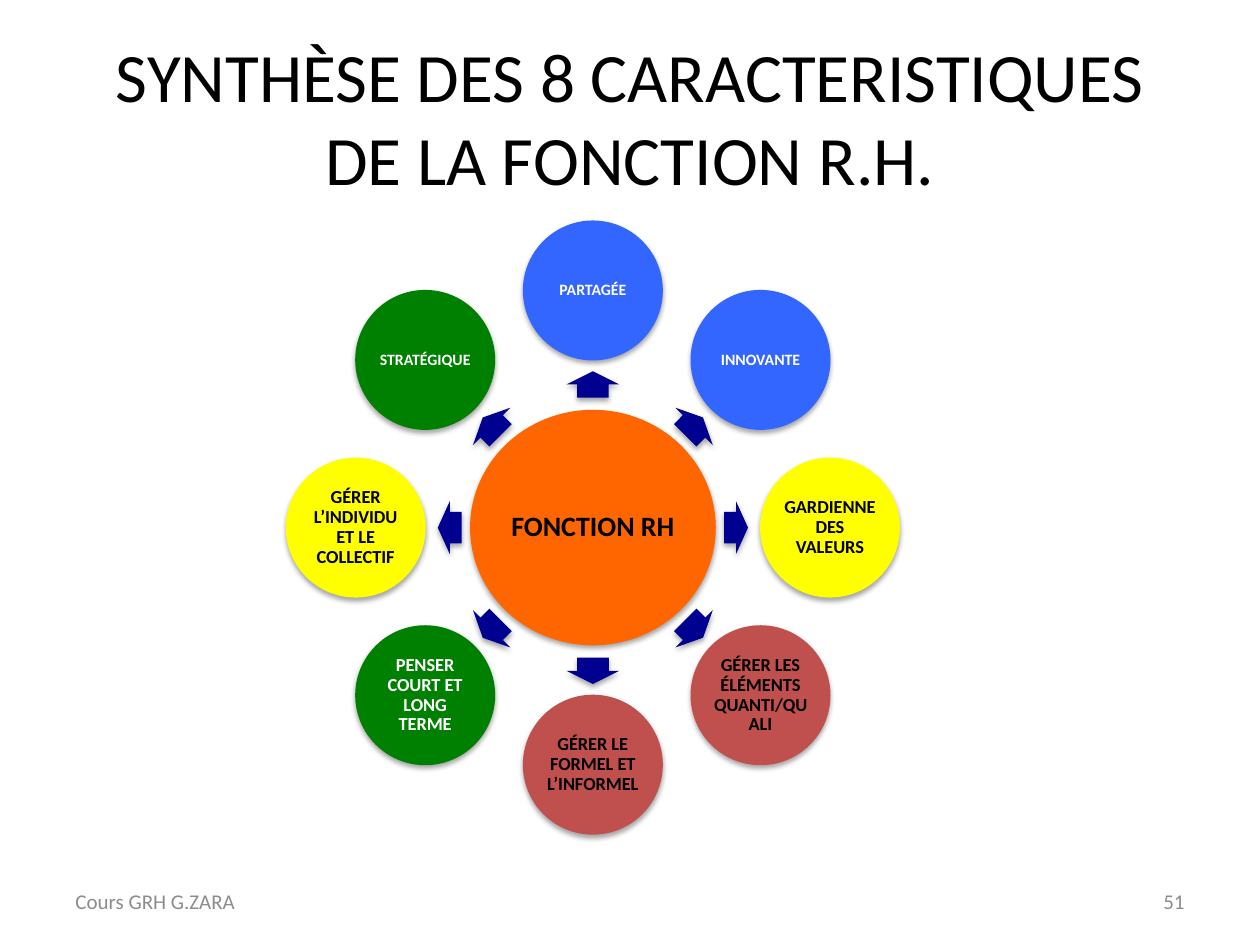
from math import cos, radians, sin

from lxml import etree
from pptx import Presentation
from pptx.dml.color import RGBColor
from pptx.enum.shapes import MSO_SHAPE as SHAPE
from pptx.enum.text import MSO_ANCHOR as ANCHOR, MSO_AUTO_SIZE as AUTO, PP_ALIGN as ALIGN
from pptx.oxml.ns import qn
from pptx.util import Pt


def write(sp, text, size, color, align, bold=False, inset=None):
    tf = sp.text_frame
    tf.word_wrap = True
    tf.auto_size = AUTO.NONE
    tf.vertical_anchor = ANCHOR.MIDDLE
    if inset is not None:
        tf.margin_left = tf.margin_right = tf.margin_top = tf.margin_bottom = Pt(inset)
    p = tf.paragraphs[0]
    p.alignment = align
    r = p.add_run()
    r.text = text
    r.font.name = "Calibri"
    r.font.size = Pt(size)
    r.font.bold = bold
    r.font.color.rgb = RGBColor.from_string(color)
    return p


def add_shape(kind, x, y, w, h, color):
    sp = s.shapes.add_shape(kind, Pt(x - w / 2), Pt(y - h / 2), Pt(w), Pt(h))
    sp.fill.solid()
    sp.fill.fore_color.rgb = RGBColor.from_string(color)
    sp.line.fill.background()
    sp.shadow.inherit = False
    effects = sp._element.spPr.find(qn("a:effectLst"))
    shadow = etree.SubElement(effects, qn("a:outerShdw"), blurRad=str(Pt(3.1)),
                              dist=str(Pt(1.8)), dir="5400000", rotWithShape="0")
    black = etree.SubElement(shadow, qn("a:srgbClr"), val="000000")
    etree.SubElement(black, qn("a:alpha"), val="35000")
    return sp


prs = Presentation()
prs.slide_width, prs.slide_height = Pt(720), Pt(540)
s = prs.slides.add_slide(prs.slide_layouts[5])

title = s.shapes.title
title.left, title.top, title.width, title.height = Pt(36), Pt(21.6), Pt(648), Pt(90)
write(title, "SYNTHÈSE DES 8 CARACTERISTIQUES DE LA FONCTION R.H.", 39.6, "000000", ALIGN.CENTER)

cx, cy = 338.8, 301.5
ring, arrow_ring = 135.5, 81.8
arrow_lengths = {0: 13.7, 45: 14.4, 90: 15.1}

hub = add_shape(SHAPE.OVAL, cx, cy, 140.4, 134.6, "FF6600")
write(hub, "FONCTION RH", 16, "000000", ALIGN.CENTER, True, 1.6).line_spacing = 0.9

traits = [
    ("PARTAGÉE", 9, "3366FF", "FFFFFF"),
    ("INNOVANTE", 9, "3366FF", "FFFFFF"),
    ("GARDIENNE DES VALEURS", 10.5, "FFFF00", "000000"),
    ("GÉRER LES ÉLÉMENTS QUANTI/QUALI", 10.5, "C0504D", "000000"),
    ("GÉRER LE FORMEL ET L’INFORMEL", 10.5, "C0504D", "000000"),
    ("PENSER COURT ET LONG TERME", 10.5, "008000", "FFFFFF"),
    ("GÉRER L’INDIVIDU ET LE COLLECTIF", 10.5, "FFFF00", "000000"),
    ("STRATÉGIQUE", 9, "008000", "FFFFFF"),
]
for i, (text, size, fill, color) in enumerate(traits):
    angle = (270 + 45 * i) % 360
    dx, dy = cos(radians(angle)), sin(radians(angle))
    length = arrow_lengths[45 if angle % 90 else angle % 180]
    arrow = add_shape(SHAPE.RIGHT_ARROW, cx + arrow_ring * dx, cy + arrow_ring * dy,
                      length, 30.2, "000090")
    arrow.adjustments[0], arrow.adjustments[1] = 0.6, 0.5
    arrow.rotation = angle
    circle = add_shape(SHAPE.OVAL, cx + ring * dx, cy + ring * dy, 80, 80, fill)
    write(circle, text, size, color, ALIGN.CENTER, True, size / 8).line_spacing = 0.9

for x, text, align in [(36, "Cours GRH G.ZARA", ALIGN.LEFT), (516, "51", ALIGN.RIGHT)]:
    box = s.shapes.add_textbox(Pt(x), Pt(500.5), Pt(168), Pt(28.75))
    write(box, text, 12, "8C8C8C", align)

prs.save("out.pptx")
